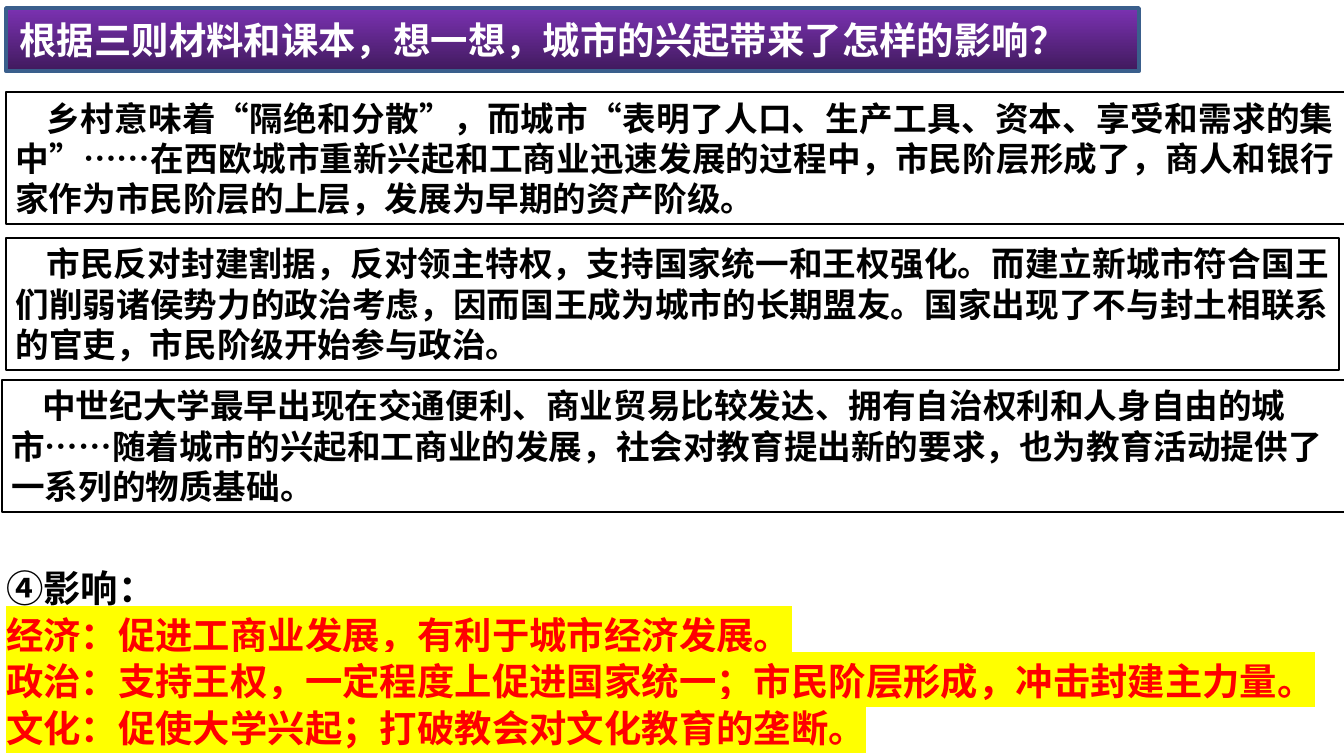
from dataclasses import dataclass

from lxml.etree import SubElement
from pptx import Presentation
from pptx.dml.color import RGBColor
from pptx.enum.shapes import MSO_SHAPE
from pptx.enum.text import MSO_ANCHOR, MSO_AUTO_SIZE, PP_ALIGN
from pptx.oxml.ns import qn
from pptx.util import Emu, Inches, Pt

COLORS = {
    "black": "000000",
    "white": "FFFFFF",
    "red": "FF0000",
    "yellow": "FFFF00",
    "purple": "7B32B2",
    "dark purple": "401A5D",
    "blue": "3A5F8C",
}
SLIDE_WIDTH = Inches(10)
SLIDE_HEIGHT = Emu(SLIDE_WIDTH * 9 // 16)


@dataclass(frozen=True)
class Frame:
    """A place on the slide, in percent of its width and height."""

    left: float
    top: float
    width: float
    height: float


@dataclass(frozen=True)
class Material:
    """A boxed reading passage."""

    frame: Frame
    text: str
    align: PP_ALIGN


MATERIALS = [
    Material(
        Frame(0.45, 12.2, 99.6, 17.45),
        "乡村意味着“隔绝和分散”，而城市“表明了人口、生产工具、资本、享受和需求的集中”"
        "……在西欧城市重新兴起和工商业迅速发展的过程中，市民阶层形成了，"
        "商人和银行家作为市民阶层的上层，发展为早期的资产阶级。",
        PP_ALIGN.JUSTIFY,
    ),
    Material(
        Frame(0.45, 31.47, 99.2, 17.45),
        "市民反对封建割据，反对领主特权，支持国家统一和王权强化。"
        "而建立新城市符合国王们削弱诸侯势力的政治考虑，因而国王成为城市的长期盟友。"
        "国家出现了不与封土相联系的官吏，市民阶级开始参与政治。",
        PP_ALIGN.JUSTIFY,
    ),
    Material(
        Frame(0.15, 50.25, 100, 17.45),
        "中世纪大学最早出现在交通便利、商业贸易比较发达、拥有自治权利和人身自由的城市"
        "……随着城市的兴起和工商业的发展，社会对教育提出新的要求，"
        "也为教育活动提供了一系列的物质基础。",
        PP_ALIGN.LEFT,
    ),
]
QUESTION = "根据三则材料和课本，想一想，城市的兴起带来了怎样的影响？"
EFFECTS = [
    "④影响：",
    "经济：促进工商业发展，有利于城市经济发展。",
    "政治：支持王权，一定程度上促进国家统一；市民阶层形成，冲击封建主力量。",
    "文化：促使大学兴起；打破教会对文化教育的垄断。",
]


def rgb(name: str) -> RGBColor:
    """Look up a named colour."""
    return RGBColor.from_string(COLORS[name])


def bounds(frame: Frame) -> tuple[Emu, Emu, Emu, Emu]:
    """Turn percentages into slide lengths."""
    shares = (frame.left, frame.top, frame.width, frame.height)
    sides = (SLIDE_WIDTH, SLIDE_HEIGHT) * 2
    return tuple(Emu(round(side * share / 100)) for side, share in zip(sides, shares))


def place(shape, frame: Frame) -> None:
    """Move a shape to a frame."""
    shape.left, shape.top, shape.width, shape.height = bounds(frame)


def format_run(span, font: str, size: int, color: str) -> None:
    """Set a bold font on a run."""
    span.font.name = font
    span.font.size = Pt(size)
    span.font.bold = True
    span.font.color.rgb = rgb(color)


def highlight(span, color: str) -> None:
    """Mark a run with a background colour."""
    properties = span.font._element
    marker = SubElement(properties, qn("a:highlight"))
    SubElement(marker, qn("a:srgbClr"), val=COLORS[color])
    properties.find(qn("a:solidFill")).addnext(marker)


def set_indent(para, indent: int) -> None:
    """Remove the bullet and set the first-line indent."""
    properties = para._p.get_or_add_pPr()
    properties.set("marL", "0")
    properties.set("indent", str(indent))
    SubElement(properties, qn("a:buNone"))


def set_frame_text(shape, text: str):
    """Fill a wrapped text frame with narrow margins."""
    frame = shape.text_frame
    frame.text = text
    frame.word_wrap = True
    frame.auto_size = MSO_AUTO_SIZE.SHAPE_TO_FIT_TEXT
    frame.vertical_anchor = MSO_ANCHOR.TOP
    frame.margin_left = frame.margin_right = Inches(0.07)
    frame.margin_top = frame.margin_bottom = Inches(0.04)
    return frame


def draw_material(page, material: Material) -> None:
    """Draw one boxed passage."""
    box = page.shapes.add_shape(MSO_SHAPE.RECTANGLE, *bounds(material.frame))
    box.shadow.inherit = False
    box.fill.background()
    box.line.color.rgb = rgb("black")
    box.line.width = Pt(1)
    para = set_frame_text(box, material.text).paragraphs[0]
    para.alignment = material.align
    set_indent(para, Inches(0.23))
    format_run(para.runs[0], "Noto Sans CJK SC", 18, "black")


def draw_title(page) -> None:
    """Turn the title placeholder into the rounded question banner."""
    title = page.shapes.title
    place(title, Frame(0.45, 1.07, 84.3, 8.36))
    title._element.find(".//" + qn("p:ph")).set("idx", "0")
    geometry = SubElement(title._element.spPr, qn("a:prstGeom"), prst="roundRect")
    SubElement(geometry, qn("a:avLst"))
    title.fill.gradient()
    title.fill.gradient_angle = 270
    for stop, position, color in zip(
        title.fill.gradient_stops, (0, 1), ("purple", "dark purple")
    ):
        stop.position = position
        stop.color.rgb = rgb(color)
    title.line.color.rgb = rgb("blue")
    title.line.width = Pt(2)
    frame = title.text_frame
    frame.text = QUESTION
    frame.word_wrap = True
    frame.auto_size = MSO_AUTO_SIZE.NONE
    frame.vertical_anchor = MSO_ANCHOR.MIDDLE
    para = frame.paragraphs[0]
    para.alignment = PP_ALIGN.LEFT
    format_run(para.runs[0], "Calibri", 20, "white")


def draw_effects(page) -> None:
    """List the effects in the body placeholder."""
    body = page.placeholders[1]
    place(body, Frame(-0.25, 73.78, 99.9, 26.31))
    frame = set_frame_text(body, "\n".join(EFFECTS))
    for index, para in enumerate(frame.paragraphs):
        para.line_spacing = Pt(25)
        para.space_before = Pt(0)
        set_indent(para, 0)
        span = para.runs[0]
        format_run(span, "Arial", 20, "red" if index else "black")
        if index:
            highlight(span, "yellow")


def main() -> None:
    """Build and save the slide."""
    deck = Presentation()
    deck.slide_width, deck.slide_height = SLIDE_WIDTH, SLIDE_HEIGHT
    page = deck.slides.add_slide(deck.slide_layouts[1])
    draw_title(page)
    for material in MATERIALS:
        draw_material(page, material)
    draw_effects(page)
    deck.save("out.pptx")


if __name__ == "__main__":
    main()
